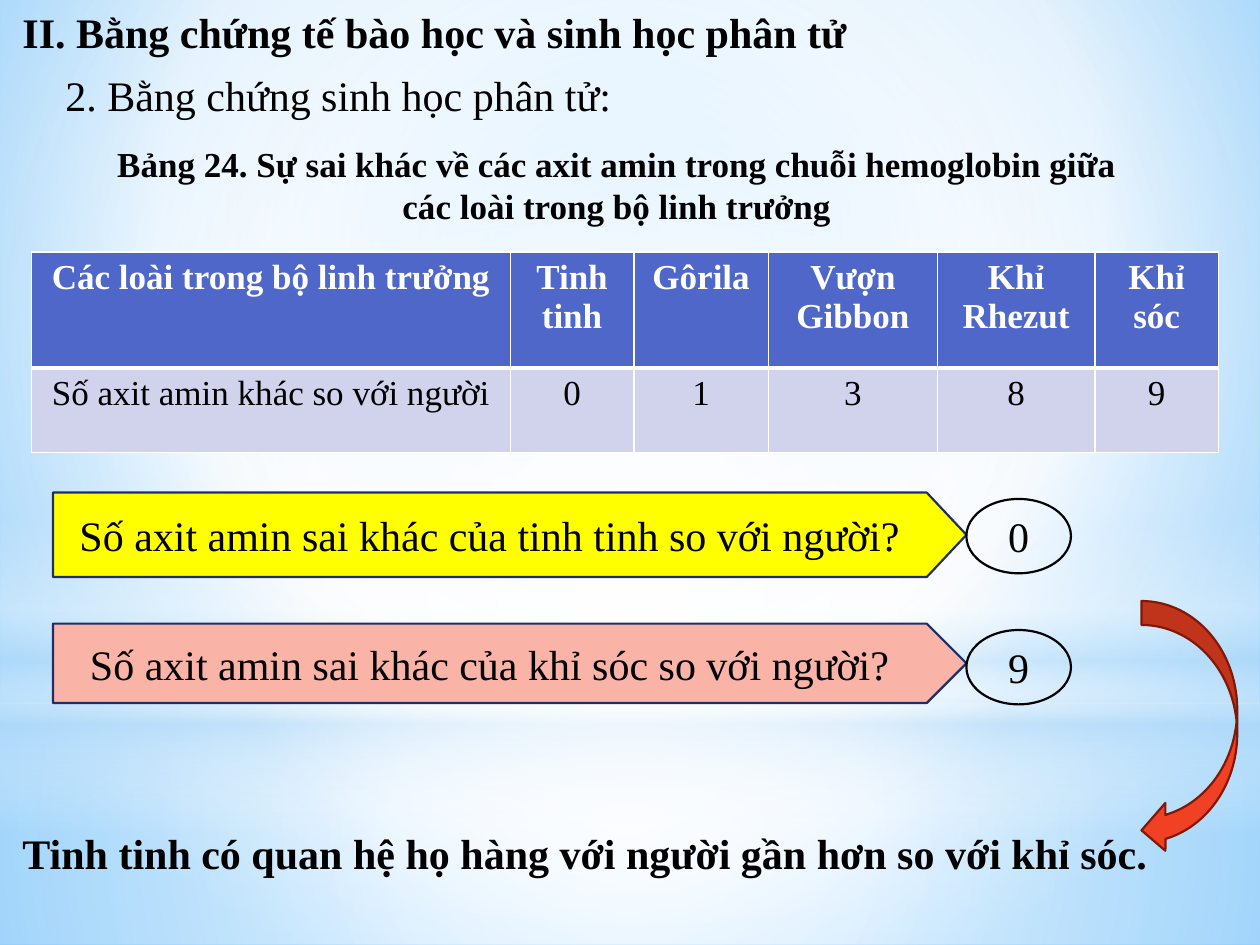
from lxml import etree
from pptx import Presentation
from pptx.dml.color import RGBColor
from pptx.enum.shapes import MSO_SHAPE
from pptx.enum.text import MSO_ANCHOR, PP_ALIGN
from pptx.oxml.ns import qn
from pptx.util import Inches, Pt

RECTANGLE, OVAL = MSO_SHAPE.RECTANGLE, MSO_SHAPE.OVAL
ARROW, CURVED_ARROW = MSO_SHAPE.RIGHT_ARROW, MSO_SHAPE.CURVED_LEFT_ARROW
LEFT, CENTER = PP_ALIGN.LEFT, PP_ALIGN.CENTER
TOP, MIDDLE = MSO_ANCHOR.TOP, MSO_ANCHOR.MIDDLE

FONT = "Times New Roman"
BLACK = RGBColor(0, 0, 0)
WHITE = RGBColor(255, 255, 255)
SKY = RGBColor(0xB4, 0xDC, 0xFA)
BLUE = RGBColor(0x4E, 0x67, 0xC8)
LAVENDER = RGBColor(0xD0, 0xD3, 0xEB)
NAVY = RGBColor(0x1F, 0x2E, 0x69)
YELLOW = RGBColor(255, 255, 0)
PINK = RGBColor(0xF9, 0xB3, 0xA7)
RED = RGBColor(0xF1, 0x41, 0x24)
MAROON = RGBColor(0x82, 0x17, 0x05)

# Gradient stops: position %, colour, opacity %
PAGE_STOPS = [(0, RGBColor(0x9E, 0xD5, 0xFF), 100), (60, WHITE, 100),
              (100, RGBColor(0x5B, 0xB9, 0xFF), 100)]
CENTRE = (50, 50, 50, 50)
# Backdrop: preset, place, stops, focus (None for a vertical gradient)
BACKDROP = [
    (RECTANGLE, (0, 5.58, 10, 1.92),
     [(0, WHITE, 91), (37, WHITE, 76), (100, SKY, 79)], CENTRE),
    (RECTANGLE, (0, 0, 10, 5.58),
     [(0, WHITE, 89), (48, WHITE, 62), (100, SKY, 79)], CENTRE),
    (RECTANGLE, (0, 4.12, 10, 2.5),
     [(0, WHITE, 0), (29, WHITE, 30), (45, SKY, 40), (55, WHITE, 26),
      (65, SKY, 60), (100, WHITE, 0)], None),
    (OVAL, (0, 1.75, 10, 5.58), [(0, WHITE, 100), (56, WHITE, 0)], CENTRE),
]

# Text, place, format
TEXTS = [
    ("II. Bằng chứng tế bào học và sinh học phân tử",
     (0.08, 0, 6.83, 0.5), {"bold": True}),
    ("2. Bằng chứng sinh học phân tử:", (0.42, 0.5, 4.75, 0.5), {}),
    ("Bảng 24. Sự sai khác về các axit amin trong chuỗi hemoglobin giữa "
     "các loài trong bộ linh trưởng",
     (0.73, 1.08, 8.33, 0.77), {"size": 20, "bold": True, "align": CENTER}),
    ("Tinh tinh có quan hệ họ hàng với người gần hơn so với khỉ sóc.",
     (0.08, 6.52, 9.25, 0.5), {"bold": True}),
]

TABLE_ROWS = [
    ["Các loài trong bộ linh trưởng", "Tinh tinh", "Gôrila", "Vượn Gibbon",
     "Khỉ Rhezut", "Khỉ sóc"],
    ["Số axit amin khác so với người", "0", "1", "3", "8", "9"],
]
COLUMN_WIDTHS = [3.8, 0.98, 1.07, 1.34, 1.25, 0.98]
ROW_HEIGHTS = [0.92, 0.67]

# Question, answer, arrow top, arrow height, arrow tip, answer top, fill
QUESTIONS = [
    ("Số axit amin sai khác của tinh tinh so với người?", "0",
     3.91, 0.67, 0.47, 3.96, YELLOW),
    ("Số axit amin sai khác của khỉ sóc so với người?", "9",
     4.95, 0.63, 0.5, 5, PINK),
]


def write(frame, text, size=24, bold=False, color=BLACK, align=LEFT, anchor=TOP):
    frame.word_wrap = True
    frame.vertical_anchor = anchor
    para = frame.paragraphs[0]
    para.alignment = align
    span = para.add_run()
    span.text = text
    span.font.name, span.font.size = FONT, Pt(size)
    span.font.bold, span.font.color.rgb = bold, color


def set_gradient(fill, element, stops, focus):
    """Give the fill found in element a gradient with opacity."""
    fill.solid()
    solid = element.find(".//" + qn("a:solidFill"))
    gradient = etree.Element(qn("a:gradFill"), rotWithShape="1")
    stop_list = etree.SubElement(gradient, qn("a:gsLst"))
    for position, color, opacity in stops:
        stop = etree.SubElement(stop_list, qn("a:gs"), pos=str(position * 1000))
        tone = etree.SubElement(stop, qn("a:srgbClr"), val=str(color))
        if opacity < 100:
            etree.SubElement(tone, qn("a:alpha"), val=str(opacity * 1000))
    if focus:
        shade = etree.SubElement(gradient, qn("a:path"), path="circle")
        sides = {side: str(part * 1000) for side, part in zip("ltrb", focus)}
        etree.SubElement(shade, qn("a:fillToRect"), **sides)
    else:
        etree.SubElement(gradient, qn("a:lin"), ang="5400000", scaled="0")
    solid.getparent().replace(solid, gradient)


def add_shape(page, preset, place, fill=None, line=None):
    shape = page.shapes.add_shape(preset, *map(Inches, place))
    shape.shadow.inherit = False
    if fill is None:
        shape.fill.background()
    else:
        shape.fill.solid()
        shape.fill.fore_color.rgb = fill
    if line is None:
        shape.line.fill.background()
    else:
        shape.line.color.rgb = line
        shape.line.width = Pt(1.25)
    return shape


def set_borders(cell, **widths):
    properties = cell._tc.get_or_add_tcPr()
    for index, side in enumerate("LRTB"):
        border = etree.Element(qn("a:ln" + side), w=str(Pt(widths.get(side, 1))))
        paint = etree.SubElement(border, qn("a:solidFill"))
        etree.SubElement(paint, qn("a:srgbClr"), val=str(WHITE))
        properties.insert(index, border)


def add_species_table(page):
    place = (0.25, 2, sum(COLUMN_WIDTHS), sum(ROW_HEIGHTS))
    table = page.shapes.add_table(
        len(TABLE_ROWS), len(COLUMN_WIDTHS), *map(Inches, place)).table
    for column, width in zip(table.columns, COLUMN_WIDTHS):
        column.width = Inches(width)
    for r, (texts, height) in enumerate(zip(TABLE_ROWS, ROW_HEIGHTS)):
        table.rows[r].height = Inches(height)
        header = r == 0
        for c, text in enumerate(texts):
            cell = table.cell(r, c)
            cell.fill.solid()
            cell.fill.fore_color.rgb = BLUE if header else LAVENDER
            set_borders(cell, **({"B": 3} if header else {"T": 3}))
            write(cell.text_frame, text, size=20, bold=header,
                  color=WHITE if header else BLACK, align=CENTER)


def main():
    deck = Presentation()
    deck.slide_width, deck.slide_height = Inches(10), Inches(7.5)
    page = deck.slides.add_slide(deck.slide_layouts[6])
    set_gradient(page.background.fill, page.element, PAGE_STOPS, (20, 10, 20, 60))
    for preset, place, stops, focus in BACKDROP:
        shape = add_shape(page, preset, place)
        set_gradient(shape.fill, shape.element, stops, focus)

    add_species_table(page)
    for text, place, style in TEXTS:
        box = page.shapes.add_textbox(*map(Inches, place))
        write(box.text_frame, text, **style)

    for question, answer, top, height, tip, answer_top, fill in QUESTIONS:
        arrow = add_shape(page, ARROW, (0.42, top, 7.25, height), fill, NAVY)
        arrow.adjustments[0], arrow.adjustments[1] = 1, tip
        oval = add_shape(page, OVAL, (7.67, answer_top, 0.83, 0.59), line=BLACK)
        for shape, text in ((arrow, question), (oval, answer)):
            write(shape.text_frame, text, align=CENTER, anchor=MIDDLE)
    add_shape(page, CURVED_ARROW, (9.06, 4.77, 0.76, 2.01), RED, MAROON)
    deck.save("out.pptx")


if __name__ == "__main__":
    main()
